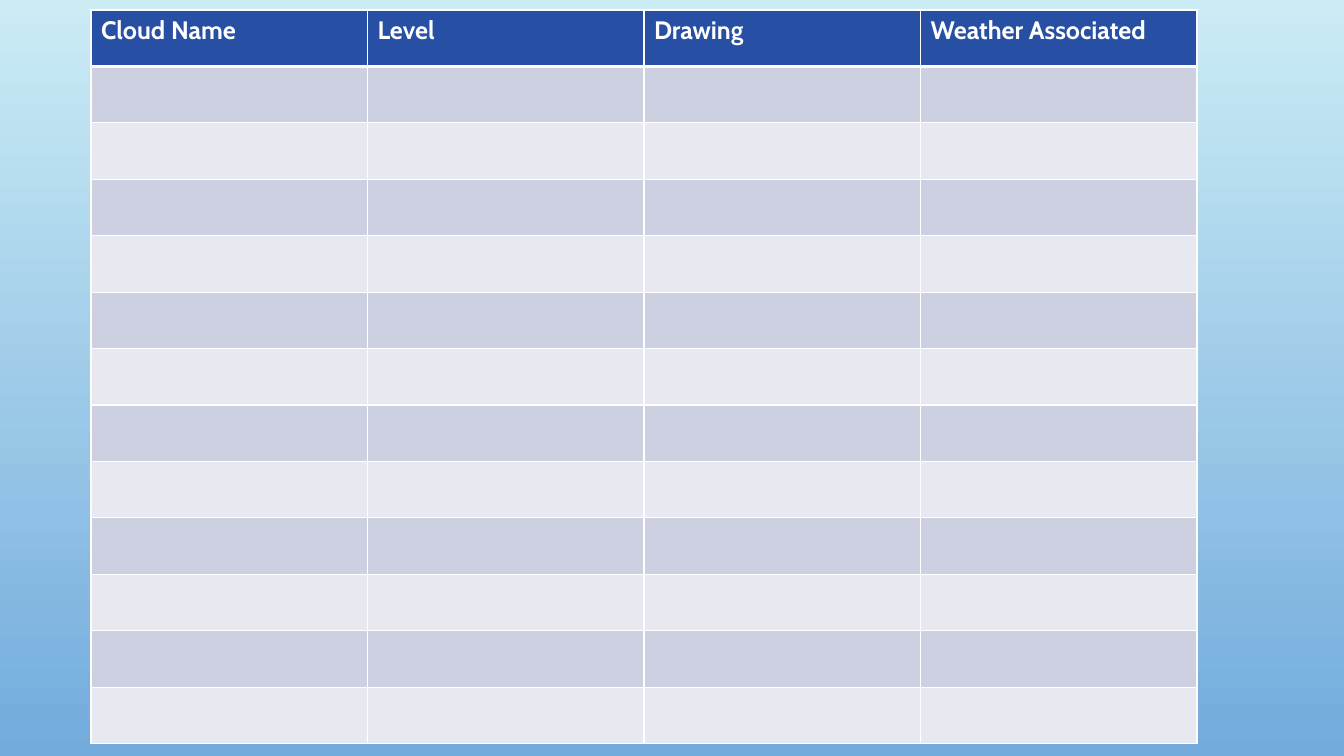
import pptx
import pptx.dml.color
import pptx.oxml
import pptx.oxml.ns
import pptx.util

SCALE = 914400 / 100.8
HEADINGS = ["Cloud Name", "Level", "Drawing", "Weather Associated"]
CLOUD_ROWS = 12
HEADER_FILL = "274FA4"
BAND_FILLS = ["CDD0E0", "E8E9F0"]
WHITE = "FFFFFF"
HEADING_FONT = {"name": "Cabin", "size": pptx.util.Pt(18), "bold": True}


def px(n):
    return pptx.util.Emu(round(n * SCALE))


def color(value):
    return pptx.dml.color.RGBColor.from_string(value)


def paint_background(s):
    fill = s.background.fill
    fill.gradient()
    fill.gradient_angle = 270
    for stop, value in zip(fill.gradient_stops, ["CBECF5", "73ABDD"]):
        stop.color.rgb = color(value)


def set_borders(cell, widths):
    tcPr = cell._tc.get_or_add_tcPr()
    for side, width in widths.items():
        tcPr.append(pptx.oxml.parse_xml(
            f'<a:ln{side} {pptx.oxml.ns.nsdecls("a")} w="{pptx.util.Pt(width)}">'
            f'<a:solidFill><a:srgbClr val="{WHITE}"/></a:solidFill></a:ln{side}>'))


def format_cell(cell, fill, widths):
    set_borders(cell, widths)
    cell.fill.solid()
    cell.fill.fore_color.rgb = color(fill)


def write_heading(cell, text):
    r = cell.text_frame.paragraphs[0].add_run()
    r.text = text
    for name, value in HEADING_FONT.items():
        setattr(r.font, name, value)
    r.font.color.rgb = color(WHITE)


def add_cloud_table(s, left, top, width, height):
    rows = CLOUD_ROWS + 1
    table = s.shapes.add_table(rows, len(HEADINGS), px(left), px(top),
                               px(width), px(height)).table
    for column in table.columns:
        column.width = px(width / len(HEADINGS))
    for i, row in enumerate(table.rows):
        row.height = px(height / rows)
        fill = BAND_FILLS[(i - 1) % 2] if i else HEADER_FILL
        widths = {"L": 1, "R": 1, "T": 3 if i == 1 else 1, "B": 1 if i else 3}
        for cell in row.cells:
            format_cell(cell, fill, widths)
    for cell, text in zip(table.rows[0].cells, HEADINGS):
        write_heading(cell, text)


def main():
    prs = pptx.Presentation()
    prs.slide_width, prs.slide_height = px(1344), px(756)
    s = prs.slides.add_slide(prs.slide_layouts[6])
    paint_background(s)
    add_cloud_table(s, 91, 10, 1106, 734)
    prs.save("out.pptx")


if __name__ == "__main__":
    main()
